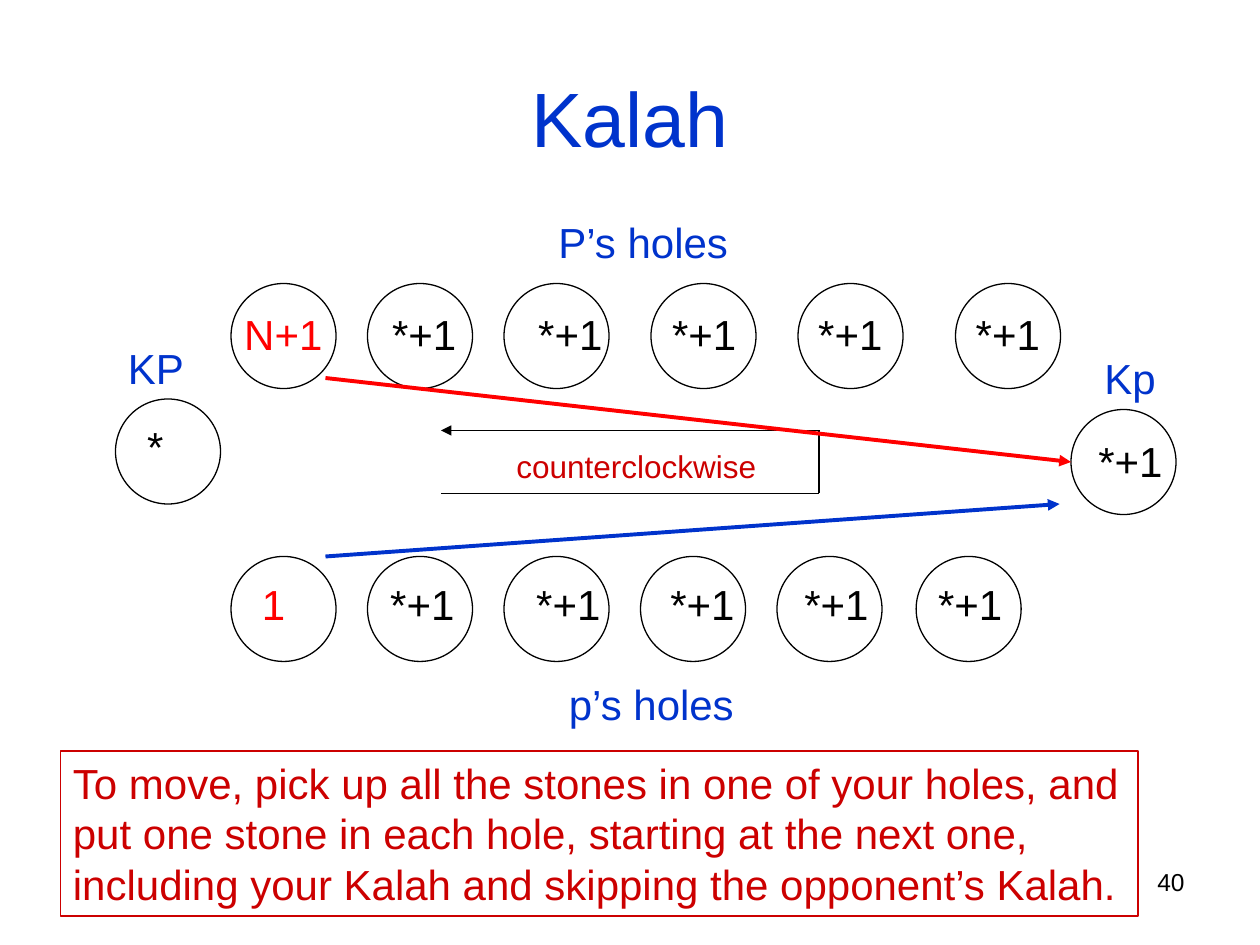
"""Build the Kalah slide that explains a sowing move."""
from dataclasses import dataclass

from pptx import Presentation
from pptx.dml.color import RGBColor
from pptx.enum.shapes import MSO_CONNECTOR, MSO_SHAPE
from pptx.enum.text import MSO_ANCHOR, PP_ALIGN
from pptx.oxml.ns import qn
from pptx.util import Pt
from lxml import etree

OVAL, RECTANGLE = MSO_SHAPE.OVAL, MSO_SHAPE.RECTANGLE
STRAIGHT = MSO_CONNECTOR.STRAIGHT
TOP, MIDDLE = MSO_ANCHOR.TOP, MSO_ANCHOR.MIDDLE
LEFT, CENTER, RIGHT = PP_ALIGN.LEFT, PP_ALIGN.CENTER, PP_ALIGN.RIGHT


@dataclass(frozen=True)
class Theme:
    font: str = "Arial"
    black: str = "000000"
    blue: str = "0033CC"
    red: str = "FF0000"
    dark_red: str = "CC0000"
    title: int = 44
    body: int = 24
    direction: int = 18
    number: int = 14
    thin: float = 0.75
    thick: float = 2.25


THEME = Theme()
HOLE = 60
LABEL_HEIGHT = 36
SOWN = "*+1"

HOLE_ROWS = [
    {"top": 162, "lefts": (132, 210, 288, 372, 456, 546),
     "first": "N+1", "counts": (132.5, 172.8, 473),
     "tabs": (84.5, 168, 244.5, 328, 418)},
    {"top": 318, "lefts": (132, 210, 288, 366, 444, 523.5),
     "first": "1", "counts": (142.5, 326.9, 441.5),
     "tabs": (73.4, 156.8, 233.5, 310, 386.5)},
]
KALAHS = [
    {"hole": (66, 228), "count": "*", "count_box": (77, 236.9, 26)},
    {"hole": (612, 234), "count": SOWN, "count_box": (620.5, 245.5, 54)},
]
LABELS = [
    ("P’s holes", 312, 120, 114),
    ("p’s holes", 318, 384, 112),
    ("KP", 66, 192, 50),
    ("Kp", 624, 198, 48),
]
DIRECTION = "counterclockwise"
DIRECTION_PATH = [(252, 282), (468, 282), (468, 246), (252, 246)]
MOVES = [
    ((186, 216), (612, 264), THEME.red),
    ((186, 318), (605.5, 288), THEME.blue),
]
RULE = [
    "To move, pick up all the stones in one of your holes, and",
    "put one stone in each hole, starting at the next one,",
    "including your Kalah and skipping the opponent’s Kalah.",
]


def rgb(color):
    return RGBColor.from_string(color)


def write(shape, paragraphs, size, align=LEFT, anchor=TOP, wrap=True):
    frame = shape.text_frame
    frame.word_wrap = wrap
    frame.vertical_anchor = anchor
    for index, runs in enumerate(paragraphs):
        paragraph = frame.add_paragraph() if index else frame.paragraphs[0]
        paragraph.alignment = align
        for text, color in runs:
            run = paragraph.add_run()
            run.text = text
            run.font.name = THEME.font
            run.font.size = Pt(size)
            run.font.color.rgb = rgb(color)


def add_text(slide, box, runs, size=THEME.body, **layout):
    label = slide.shapes.add_textbox(*map(Pt, box))
    write(label, [runs], size, **layout)
    return label


def add_outline(slide, preset, box, color):
    outline = slide.shapes.add_shape(preset, *map(Pt, box))
    outline.shadow.inherit = False
    outline.fill.background()
    outline.line.color.rgb = rgb(color)
    outline.line.width = Pt(THEME.thin)
    return outline


def add_line(slide, start, end, color, width, arrow):
    line = slide.shapes.add_connector(STRAIGHT, *map(Pt, start + end))
    line.line.color.rgb = rgb(color)
    line.line.width = Pt(width)
    if arrow:
        etree.SubElement(line.line._ln, qn("a:tailEnd"), type="triangle")
    etree.SubElement(line._element.spPr, qn("a:effectLst"))


def set_tabs(paragraph, positions):
    tabs = etree.SubElement(paragraph._p.get_or_add_pPr(), qn("a:tabLst"))
    for position in positions:
        etree.SubElement(tabs, qn("a:tab"), pos=str(Pt(position)), algn="l")


def add_hole_row(slide, row):
    for left in row["lefts"]:
        add_outline(slide, OVAL, (left, row["top"], HOLE, HOLE), THEME.black)
    left, top, width = row["counts"]
    runs = [(row["first"], THEME.red)]
    runs += [("\t" + SOWN, THEME.black) for _ in row["tabs"]]
    counts = add_text(slide, (left, top, width, LABEL_HEIGHT), runs)
    set_tabs(counts.text_frame.paragraphs[0], row["tabs"])


def add_kalah(slide, kalah):
    add_outline(slide, OVAL, (*kalah["hole"], HOLE, HOLE), THEME.black)
    add_text(slide, (*kalah["count_box"], LABEL_HEIGHT),
             [(kalah["count"], THEME.black)])


def main():
    deck = Presentation()
    deck.slide_width, deck.slide_height = Pt(720), Pt(540)
    slide = deck.slides.add_slide(deck.slide_layouts[6])

    add_text(slide, (516, 492, 168, 37.5), [("40", THEME.black)],
             THEME.number, align=RIGHT)
    add_text(slide, (36, 21.6, 648, 90), [("Kalah", THEME.blue)],
             THEME.title, align=CENTER, anchor=MIDDLE)

    for row in HOLE_ROWS:
        add_hole_row(slide, row)
    for kalah in KALAHS:
        add_kalah(slide, kalah)
    for text, left, top, width in LABELS:
        add_text(slide, (left, top, width, LABEL_HEIGHT), [(text, THEME.blue)])

    rule = add_outline(slide, RECTANGLE, (34.6, 429.2, 615.8, 94.3),
                       THEME.dark_red)
    write(rule, [[(line, THEME.dark_red)] for line in RULE], THEME.body,
          wrap=False)

    for start, end in zip(DIRECTION_PATH, DIRECTION_PATH[1:]):
        add_line(slide, start, end, THEME.black, THEME.thin,
                 arrow=end == DIRECTION_PATH[-1])
    add_text(slide, (288, 252, 160, 29), [(DIRECTION, THEME.dark_red)],
             THEME.direction)
    for start, end, color in MOVES:
        add_line(slide, start, end, color, THEME.thick, arrow=True)

    deck.save("out.pptx")


if __name__ == "__main__":
    main()
